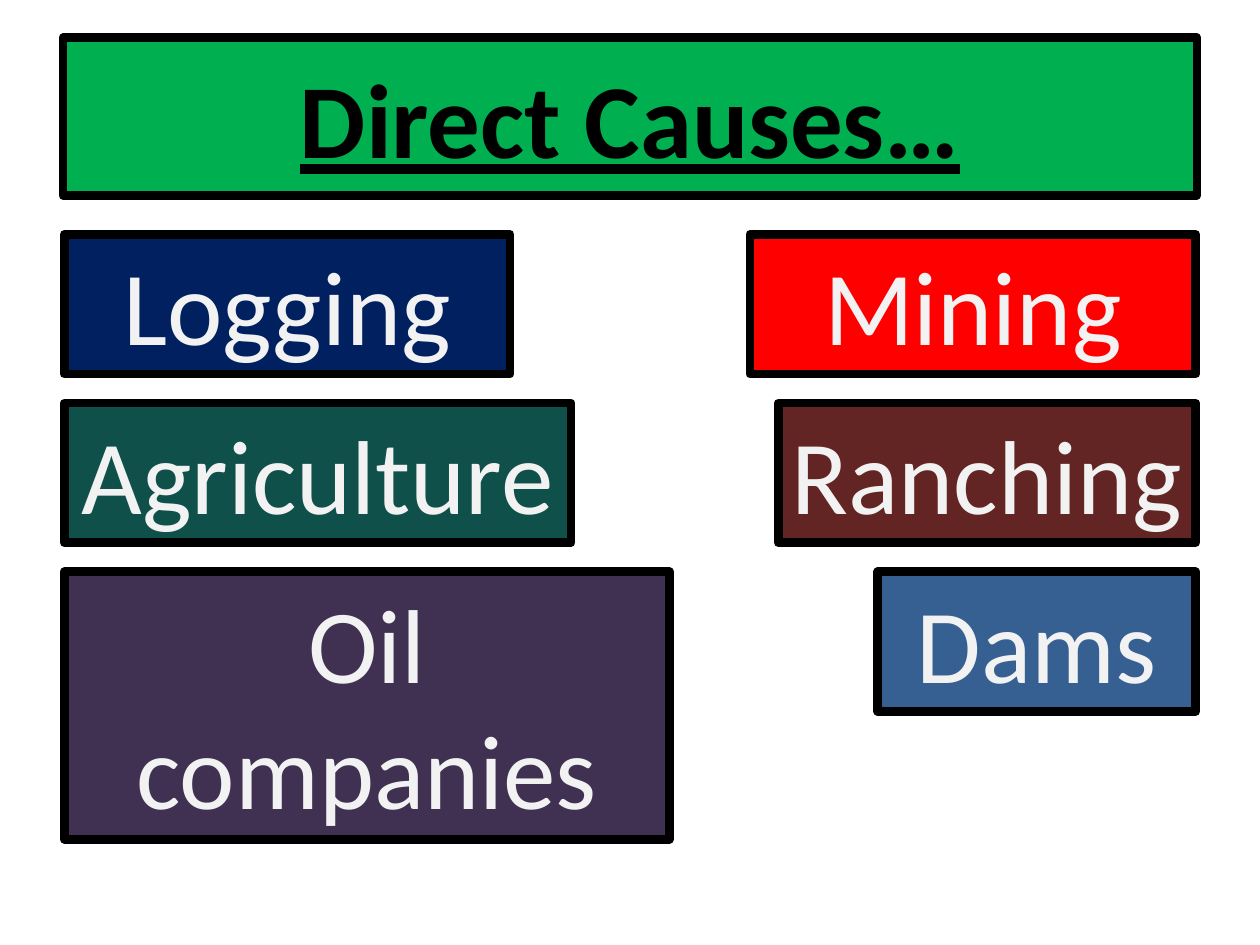
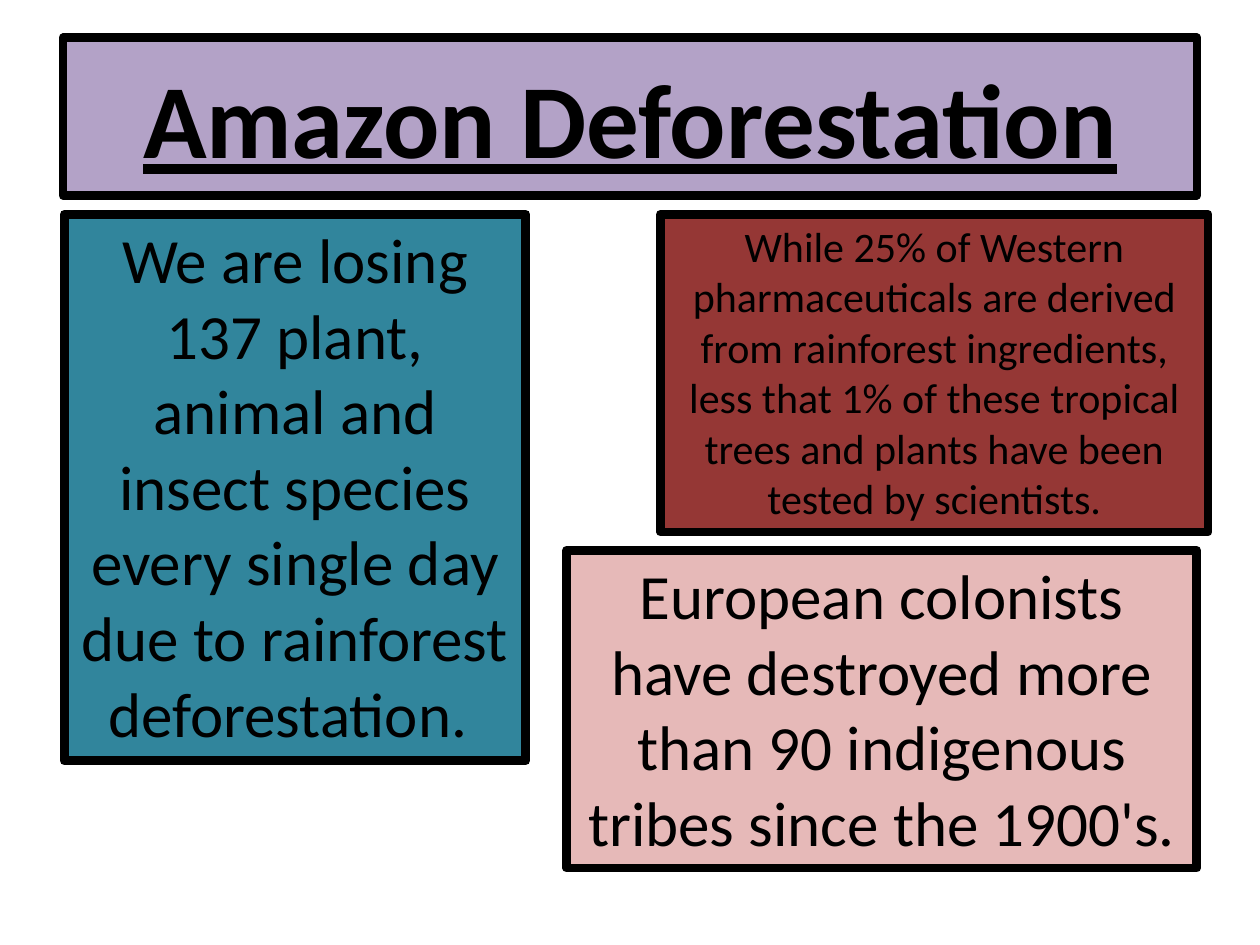
from collections import namedtuple

from pptx import Presentation
from pptx.dml.color import RGBColor as Color
from pptx.enum.text import MSO_ANCHOR as Anchor, MSO_AUTO_SIZE as AutoSize, PP_ALIGN as Align
from pptx.util import Inches, Pt

Box = namedtuple("Box", "left top width height")

PAGE = Box(0, 0, 10, 7.5)
TITLE_BAND = Box(0.05, 0.04, 0.9, 1 / 6)  # shares of the page
CAUSES_AREA = Box(0.51, 1.86, 8.98, 4.8)
FACTS_AREA = Box(0.51, 1.7, 8.98, 5.19)

FONT = "Calibri"
BORDER_WIDTH = 5
BLACK = Color(0x00, 0x00, 0x00)
OFF_WHITE = Color(0xF2, 0xF2, 0xF2)
GREEN = Color(0x00, 0xB0, 0x50)
NAVY = Color(0x00, 0x20, 0x60)
RED = Color(0xFF, 0x00, 0x00)
DARK_TEAL = Color(0x10, 0x50, 0x4A)
MAROON = Color(0x63, 0x25, 0x23)
PLUM = Color(0x40, 0x31, 0x52)
BLUE = Color(0x37, 0x60, 0x92)
LILAC = Color(0xB3, 0xA2, 0xC7)
AQUA = Color(0x31, 0x85, 0x9C)
BRICK = Color(0x95, 0x37, 0x35)
PINK = Color(0xE6, 0xB9, 0xB8)

# Rows of (text, fill, width as a share of the area, height in rows)
LEFT_CAUSES = [
    ("Logging", NAVY, 0.394, 1),
    ("Agriculture", DARK_TEAL, 0.448, 1),
    ("Oil companies", PLUM, 0.535, 2),
]
RIGHT_CAUSES = [
    ("Mining", RED, 0.394, 1),
    ("Ranching", MAROON, 0.369, 1),
    ("Dams", BLUE, 0.281, 1),
]
CAUSE_STEP = 0.279
CAUSE_HEIGHTS = {1: 0.231, 2: 0.442}

# Text, fill, size and place as shares of the area
FACTS = [
    ("We are losing 137 plant, animal and insect species every single day "
     "due to rainforest deforestation. ", AQUA, 36, Box(0, 0, 0.408, 0.836)),
    ("While 25% of Western pharmaceuticals are derived from rainforest "
     "ingredients, less that 1% of these tropical trees and plants have been "
     "tested by scientists.", BRICK, 24, Box(0.527, 0, 0.484, 0.486)),
    ("European colonists have destroyed more than 90 indigenous tribes since "
     "the 1900's.", PINK, 36, Box(0.444, 0.514, 0.557, 0.486)),
]


def inside(area, share):
    """Turn shares of an area into lengths on the slide."""
    return Box(area.left + share.left * area.width,
               area.top + share.top * area.height,
               share.width * area.width,
               share.height * area.height)


def write(shape, text, size, color=BLACK, bold=False, underline=False):
    frame = shape.text_frame
    frame.word_wrap = True
    para = frame.paragraphs[0]
    para.alignment = Align.CENTER
    span = para.add_run()
    span.text = text
    font = span.font
    font.name, font.size = FONT, Pt(size)
    font.bold, font.underline = bold, underline
    font.color.rgb = color


def paint(shape, fill):
    shape.fill.solid()
    shape.fill.fore_color.rgb = fill
    shape.line.color.rgb = BLACK
    shape.line.width = Pt(BORDER_WIDTH)


def add_titled_slide(deck, text, fill):
    slide = deck.slides.add_slide(deck.slide_layouts[5])
    title = slide.shapes.title
    title.left, title.top, title.width, title.height = map(Inches, inside(PAGE, TITLE_BAND))
    paint(title, fill)
    write(title, text, 60, bold=True, underline=True)
    title.text_frame.vertical_anchor = Anchor.MIDDLE
    title.text_frame.auto_size = AutoSize.NONE
    return slide


def add_card(slide, box, text, fill, size, color=BLACK):
    card = slide.shapes.add_textbox(*map(Inches, box))
    paint(card, fill)
    write(card, text, size, color)
    card.text_frame.auto_size = AutoSize.SHAPE_TO_FIT_TEXT


def add_causes(slide, area, causes, flush_right=False):
    """Stack cause cards against the left or right edge of the area."""
    for row, (text, fill, width, rows) in enumerate(causes):
        left = 1 - width if flush_right else 0
        share = Box(left, row * CAUSE_STEP, width, CAUSE_HEIGHTS[rows])
        add_card(slide, inside(area, share), text, fill, 60, OFF_WHITE)


def add_facts(slide, area):
    for text, fill, size, share in FACTS:
        add_card(slide, inside(area, share), text, fill, size)


def main():
    deck = Presentation()
    deck.slide_width, deck.slide_height = Inches(PAGE.width), Inches(PAGE.height)

    causes_slide = add_titled_slide(deck, "Direct Causes…", GREEN)
    add_causes(causes_slide, CAUSES_AREA, LEFT_CAUSES)
    add_causes(causes_slide, CAUSES_AREA, RIGHT_CAUSES, flush_right=True)

    facts_slide = add_titled_slide(deck, "Amazon Deforestation", LILAC)
    add_facts(facts_slide, FACTS_AREA)

    deck.save("out.pptx")


if __name__ == "__main__":
    main()
